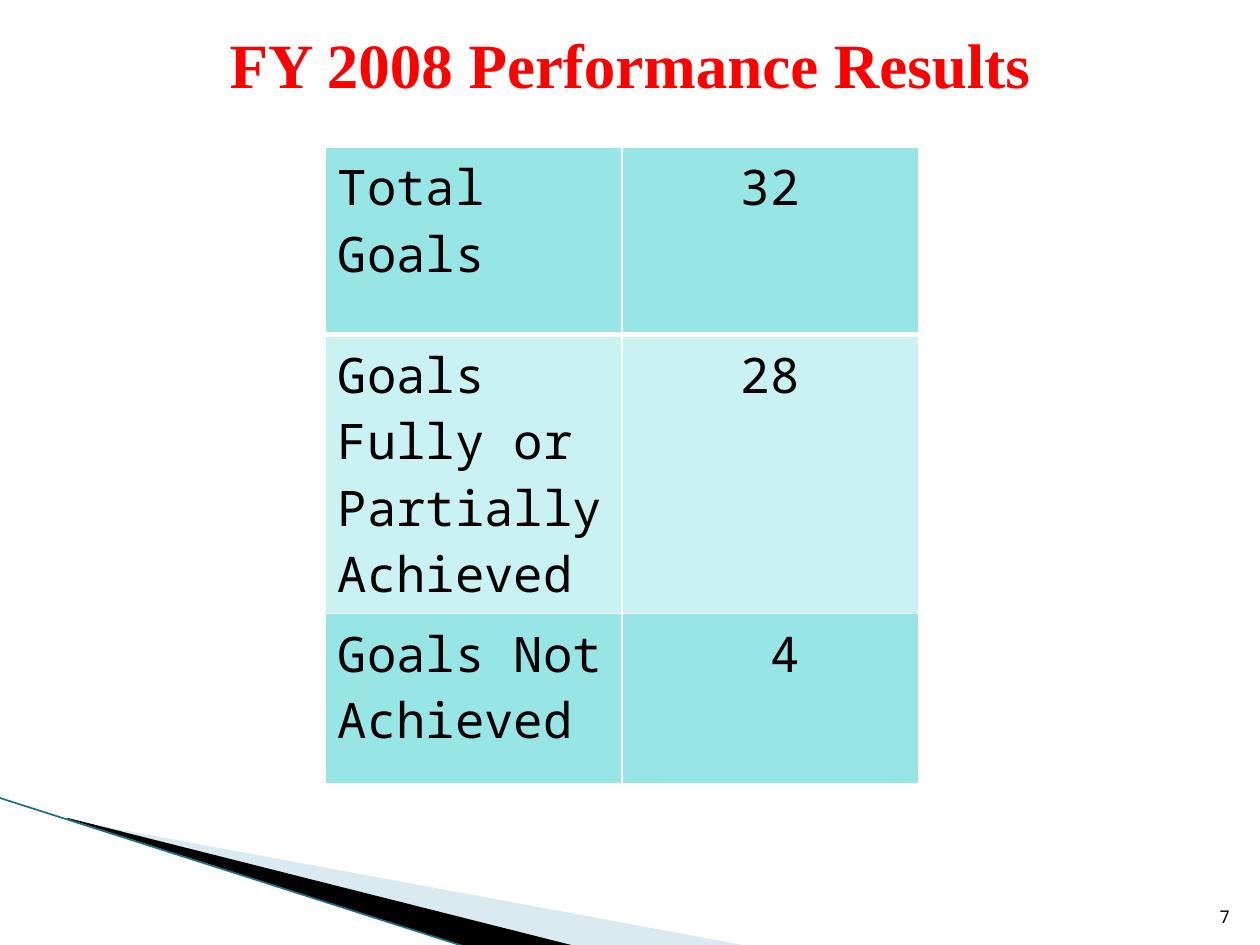
from dataclasses import dataclass
from typing import Optional

from pptx import Presentation
from pptx.dml.color import RGBColor
from pptx.enum.shapes import MSO_CONNECTOR as Connector
from pptx.enum.text import MSO_ANCHOR as Anchor, PP_ALIGN as Align
from pptx.oxml.ns import qn
from pptx.util import Pt
from lxml.etree import SubElement

WHITE = RGBColor(0xFF, 0xFF, 0xFF)
BLACK = RGBColor(0x00, 0x00, 0x00)
RED = RGBColor(0xFF, 0x00, 0x00)
TURQUOISE = RGBColor(0x33, 0xCC, 0xCC)
PALE_BLUE = RGBColor(0xA0, 0xCB, 0xDC)
TEAL = RGBColor(0x1A, 0x70, 0x85)

MONO = "Noto Sans Mono"
SERIF = "Times New Roman"
TITLE_FONT = dict(name=SERIF, size=Pt(36), bold=True)
CELL_FONT = dict(name=MONO, size=Pt(28))
NUMBER_FONT = dict(name=MONO, size=Pt(10))


@dataclass
class Wedge:
    points: list[tuple[float, float]]
    color: RGBColor
    opacity: int = 100


@dataclass
class Label:
    text: str
    frame: tuple[float, float, float, float]
    font: dict
    color: RGBColor
    align: Align
    anchor: Anchor


@dataclass
class Result:
    goal: str
    count: str
    height: float
    opacity: int


WEDGES = [
    Wedge([(39.6, 468.7), (428.4, 540.7), (328.3, 540.7), (39.6, 468)], PALE_BLUE, 40),
    Wedge([(38.2, 467.3), (329, 540.7), (267.8, 541.4), (38.9, 468)], BLACK),
]
LABELS = [
    Label("FY 2008 Performance Results", (36, 18, 648, 36), TITLE_FONT, RED,
          Align.CENTER, Anchor.MIDDLE),
    Label("7", (681, 504.7, 28.8, 28.8), NUMBER_FONT, BLACK, Align.RIGHT, Anchor.BOTTOM),
]
RESULTS = [
    Result("Total Goals", "32", 107, 50),
    Result("Goals Fully or Partially Achieved", "28", 109.4, 25),
    Result("Goals Not Achieved", " 4", 97.5, 50),
]
TABLE_LEFT, TABLE_TOP, COLUMN_WIDTH = 185.8, 84.2, 169.5


def paint(fill, parent, color: RGBColor, opacity: int) -> None:
    """Fill solid; parent is the XML element that holds the fill."""
    fill.solid()
    fill.fore_color.rgb = color
    if opacity < 100:
        tint = parent.find(qn("a:solidFill")).find(qn("a:srgbClr"))
        SubElement(tint, qn("a:alpha"), val=str(opacity * 1000))


def write(frame, text: str, font: dict, color: RGBColor, align: Optional[Align]) -> None:
    para = frame.paragraphs[0]
    para.alignment = align
    span = para.add_run()
    span.text = text
    for key, value in font.items():
        setattr(span.font, key, value)
    span.font.color.rgb = color


def draw_wedge(page, wedge: Wedge) -> None:
    points = [(Pt(x), Pt(y)) for x, y in wedge.points]
    builder = page.shapes.build_freeform(*points[0])
    builder.add_line_segments(points[1:], close=True)
    shape = builder.convert_to_shape()
    shape.shadow.inherit = False
    shape.line.fill.background()
    paint(shape.fill, shape._element.spPr, wedge.color, wedge.opacity)


def draw_edge(page) -> None:
    edge = page.shapes.add_connector(Connector.STRAIGHT, Pt(-0.7), Pt(455.8),
                                     Pt(267.1), Pt(541.4))
    edge.line.color.rgb = TEAL
    edge.line.width = Pt(0.95)
    SubElement(edge._element.spPr, qn("a:effectLst"))


def draw_label(page, label: Label) -> None:
    box = page.shapes.add_textbox(*map(Pt, label.frame))
    box.text_frame.word_wrap = True
    box.text_frame.vertical_anchor = label.anchor
    write(box.text_frame, label.text, label.font, label.color, label.align)


def add_borders(cell, bottom: float) -> None:
    properties = cell._tc.get_or_add_tcPr()
    for side, width in dict(L=1, R=1, T=1, B=bottom).items():
        line = SubElement(properties, qn(f"a:ln{side}"), w=str(Pt(width)))
        solid = SubElement(line, qn("a:solidFill"))
        SubElement(solid, qn("a:srgbClr"), val=str(WHITE))


def draw_results(page, results: list[Result]) -> None:
    height = sum(result.height for result in results)
    table = page.shapes.add_table(len(results), 2, Pt(TABLE_LEFT), Pt(TABLE_TOP),
                                  Pt(2 * COLUMN_WIDTH), Pt(height)).table
    table.first_row = table.horz_banding = False
    for column in table.columns:
        column.width = Pt(COLUMN_WIDTH)
    for index, result in enumerate(results):
        table.rows[index].height = Pt(result.height)
        entries = [(result.goal, Align.LEFT), (result.count, Align.CENTER)]
        for cell, (text, align) in zip(table.rows[index].cells, entries):
            add_borders(cell, bottom=3 if index == 0 else 1)
            paint(cell.fill, cell._tc.tcPr, TURQUOISE, result.opacity)
            write(cell.text_frame, text, CELL_FONT, BLACK, align)


def main() -> None:
    deck = Presentation()
    deck.slide_width, deck.slide_height = Pt(720), Pt(540)
    page = deck.slides.add_slide(deck.slide_layouts[6])

    # Corner decoration
    for wedge in WEDGES:
        draw_wedge(page, wedge)
    draw_edge(page)

    # Results table
    draw_results(page, RESULTS)

    # Title and page number
    for label in LABELS:
        draw_label(page, label)

    deck.save("out.pptx")


if __name__ == "__main__":
    main()
